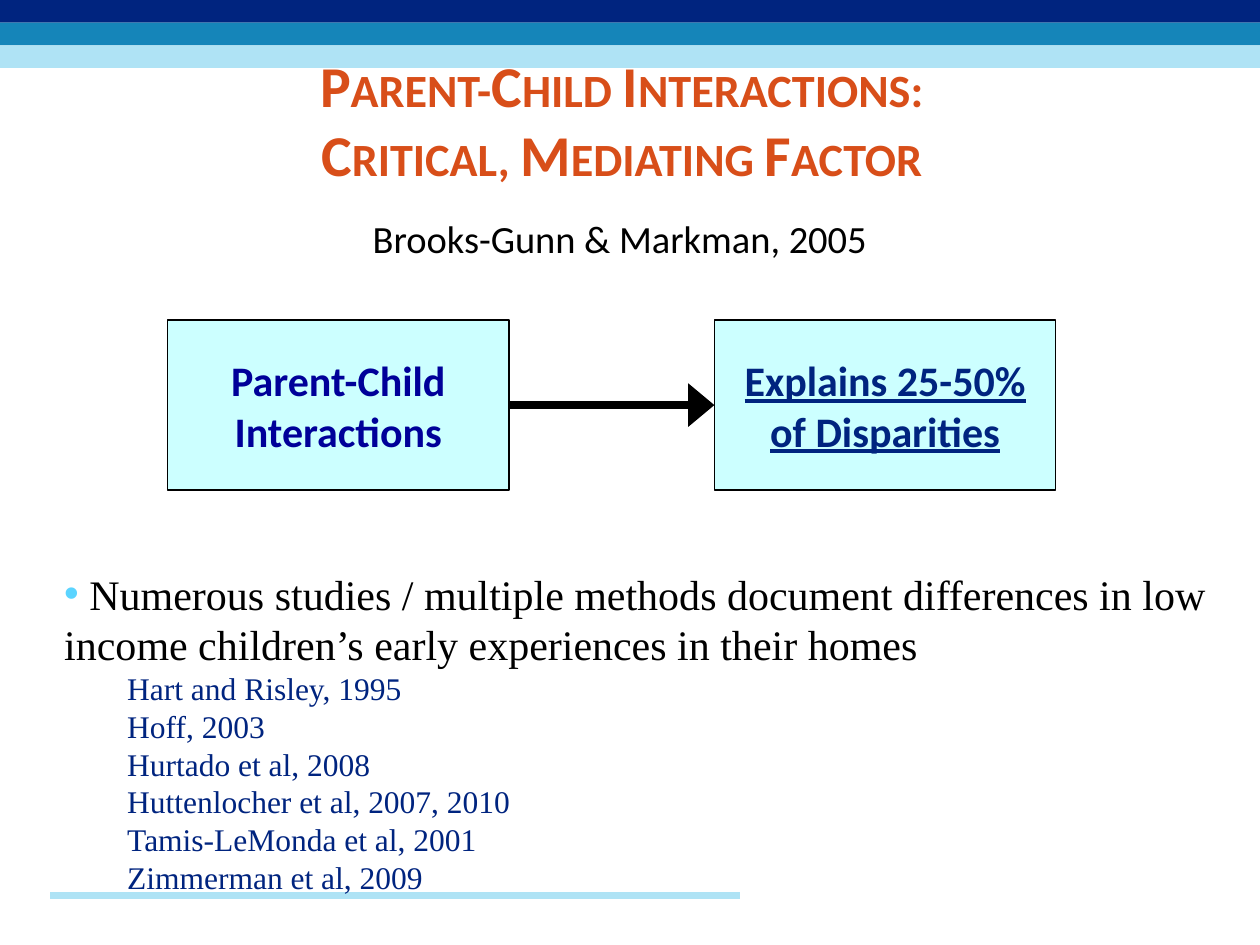
from lxml import etree
from pptx import Presentation
from pptx.dml.color import RGBColor
from pptx.enum import shapes, text
from pptx.oxml.ns import qn
from pptx.util import Inches, Pt

NAVY, PALE, BLACK = "00247F", "AFE3F5", "000000"
STUDIES = ["Hart and Risley, 1995", "Hoff, 2003", "Hurtado et al, 2008",
           "Huttenlocher et al, 2007, 2010", "Tamis-LeMonda et al, 2001",
           "Zimmerman et al, 2009"]


def rgb(value):
    return RGBColor.from_string(value)


def add_run(p, words, size, color, font="Calibri", bold=False, underline=False):
    r = p.add_run()
    r.text = words
    f = r.font
    f.size, f.name, f.bold, f.underline = Pt(size), font, bold, underline
    f.color.rgb = rgb(color)
    return r


def place(sp, left, top, width, height):
    sp.left, sp.top = Inches(left), Inches(top)
    sp.width, sp.height = Inches(width), Inches(height)


def add_rect(s, left, top, width, height, fill, line=None):
    sp = s.shapes.add_shape(shapes.MSO_SHAPE.RECTANGLE, Inches(left), Inches(top),
                            Inches(width), Inches(height))
    sp.shadow.inherit = False
    sp.fill.solid()
    sp.fill.fore_color.rgb = rgb(fill)
    if line:
        sp.line.color.rgb = rgb(line)
        sp.line.width = Pt(0.75)
    else:
        sp.line.fill.background()
    return sp


def add_box(s, left, lines, color, underline=False):
    sp = add_rect(s, left, 2.54, 2.71, 1.35, "CCFFFF", BLACK)
    tf = sp.text_frame
    tf.word_wrap = False
    tf.vertical_anchor = text.MSO_ANCHOR.MIDDLE
    for i, words in enumerate(lines):
        p = tf.add_paragraph() if i else tf.paragraphs[0]
        p.alignment = text.PP_ALIGN.CENTER
        add_run(p, words, 24, color, bold=True, underline=underline)
    return sp


def add_line(s, x1, x2, y, color, width):
    c = s.shapes.add_connector(shapes.MSO_CONNECTOR.STRAIGHT, Inches(x1), Inches(y),
                               Inches(x2), Inches(y))
    c.line.color.rgb = rgb(color)
    c.line.width = Pt(width)
    etree.SubElement(c._element.spPr, qn("a:effectLst"))
    return c


def add_arrow(s, start, end):
    c = add_line(s, 4.04, 5.67, 3.22, BLACK, 5)
    c.begin_connect(start, 3)
    c.end_connect(end, 1)
    etree.SubElement(c.line._get_or_add_ln(), qn("a:tailEnd"), type="triangle", w="lg")


def format_item(p, margin, indent, bullet=None):
    pPr = p._p.get_or_add_pPr()
    pPr.set("marL", str(Inches(margin)))
    pPr.set("indent", str(Inches(indent)))
    if bullet:
        etree.SubElement(pPr, qn("a:buChar"), char=bullet)
    else:
        etree.SubElement(pPr, qn("a:buNone"))
    p.space_before = Pt(0)
    p.line_spacing = 1.0


def add_decoration(s):
    bands = [add_rect(s, 0, 0.18 * i, 10, 0.18, color)
             for i, color in enumerate([NAVY, "1585B9", PALE])]
    rule = add_line(s, 0.4, 5.87, 7.11, PALE, 4)
    # Send behind the placeholders
    tree = s.shapes._spTree
    for i, sp in enumerate(bands + [rule]):
        tree.insert(2 + i, sp._element)


def fill_title(sp):
    place(sp, 0.42, 0.34, 9.03, 1.21)
    tf = sp.text_frame
    tf.auto_size = text.MSO_AUTO_SIZE.NONE
    tf.vertical_anchor = text.MSO_ANCHOR.MIDDLE
    p = tf.paragraphs[0]
    p.alignment = text.PP_ALIGN.CENTER
    for i, words in enumerate(["Parent-Child Interactions:",
                               "Critical, Mediating Factor"]):
        if i:
            p.add_line_break()
        r = add_run(p, words, 33, "D84E19", bold=True)
        r.font._element.set("cap", "small")


def fill_body(sp):
    place(sp, 0.41, 4.46, 9.38, 2.73)
    tf = sp.text_frame
    tf.auto_size = text.MSO_AUTO_SIZE.NONE
    p = tf.paragraphs[0]
    format_item(p, 0, 0, "•")
    serif = "Times New Roman"
    add_run(p, " ", 24, "5BD4FF", serif)
    add_run(p, "Numerous studies / multiple methods document differences in low "
            "income children’s early experiences in their homes", 24, BLACK, serif)
    for study in STUDIES:
        p = tf.add_paragraph()
        p.level = 1
        format_item(p, 0.81, -0.31)
        add_run(p, study, 18, NAVY, serif)


def add_citation(s):
    tb = s.shapes.add_textbox(Inches(2.86), Inches(1.66), Inches(4.25), Inches(0.47))
    tb.text_frame.word_wrap = False
    add_run(tb.text_frame.paragraphs[0], "Brooks-Gunn & Markman, 2005", 22, BLACK)


def main():
    prs = Presentation()
    prs.slide_width, prs.slide_height = Inches(10), Inches(7.5)
    s = prs.slides.add_slide(prs.slide_layouts[1])
    add_decoration(s)
    fill_title(s.shapes.title)
    # Diagram
    cause = add_box(s, 1.33, ["Parent-Child", "Interactions"], "000099")
    effect = add_box(s, 5.67, ["Explains 25-50%", "of Disparities"], NAVY, underline=True)
    add_arrow(s, cause, effect)
    add_citation(s)
    # Evidence list
    fill_body(s.placeholders[1])
    prs.save("out.pptx")


if __name__ == "__main__":
    main()
